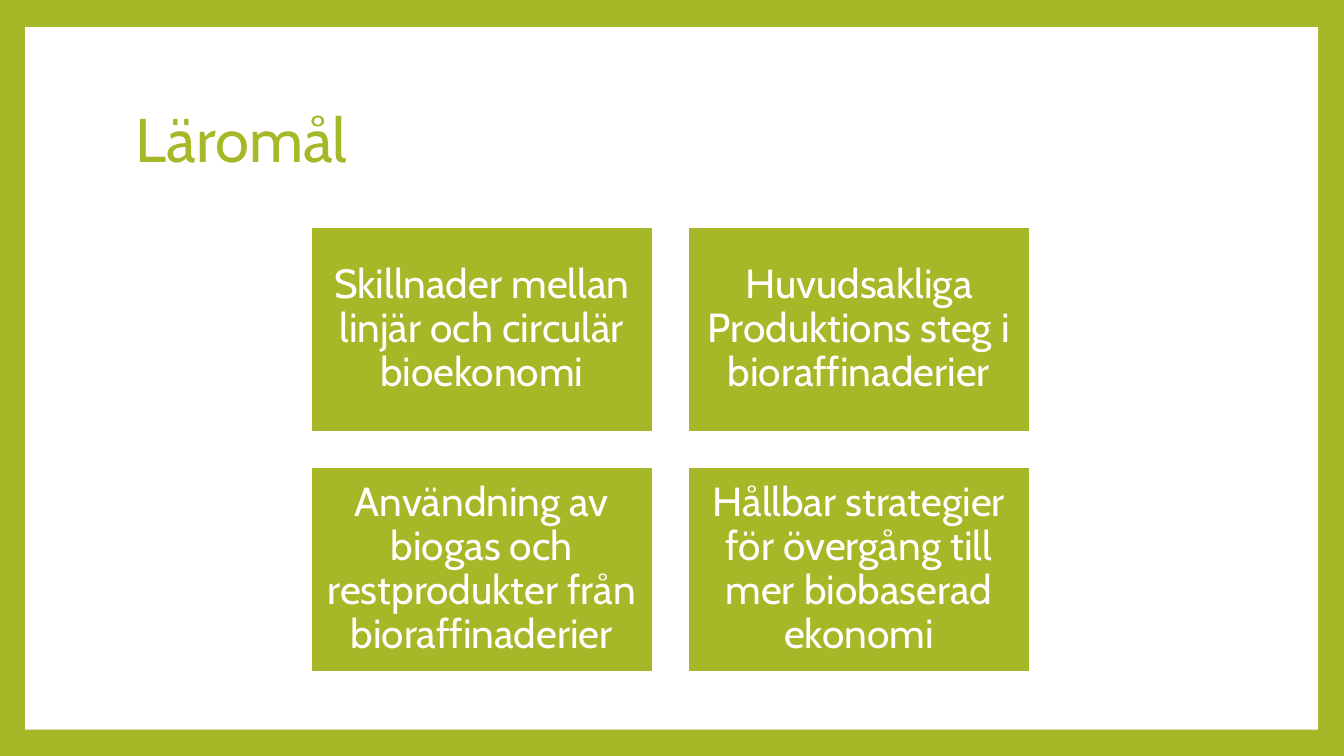
import pptx
import pptx.dml.color
import pptx.enum.shapes
import pptx.enum.text
import pptx.util

Inches = pptx.util.Inches
Pt = pptx.util.Pt
Align = pptx.enum.text.PP_ALIGN
GREEN = pptx.dml.color.RGBColor(0xA6, 0xB7, 0x27)
WHITE = pptx.dml.color.RGBColor(0xFF, 0xFF, 0xFF)


def put_text(shape, text, font="Cabin", size=29, color=WHITE,
             align=Align.CENTER, inset=(0.12, 0.12)):
    frame = shape.text_frame
    frame.word_wrap = True
    frame.vertical_anchor = pptx.enum.text.MSO_ANCHOR.MIDDLE
    frame.margin_left = frame.margin_right = Inches(inset[0])
    frame.margin_top = frame.margin_bottom = Inches(inset[1])
    para = frame.paragraphs[0]
    para.alignment = align
    para.line_spacing = 0.9
    run = para.add_run()
    run.text = text
    run.font.name = font
    run.font.size = Pt(size)
    run.font.color.rgb = color


class Deck:
    """Holds the style and the current slide."""

    def __init__(self, slide, main=GREEN, paper=WHITE):
        self.slide, self.main, self.paper = slide, main, paper
        fill = slide.background.fill
        fill.solid()
        fill.fore_color.rgb = main

    def rect(self, x, y, w, h, color, edge=None):
        box = self.slide.shapes.add_shape(
            pptx.enum.shapes.MSO_SHAPE.RECTANGLE,
            Inches(x), Inches(y), Inches(w), Inches(h))
        box.shadow.inherit = False
        box.fill.solid()
        box.fill.fore_color.rgb = color
        if edge is None:
            box.line.fill.background()
        else:
            box.line.color.rgb = edge
            box.line.width = Pt(1.5)
        return box

    def panel(self, x, y, w, h):
        self.rect(x, y, w, h, self.paper)

    def title(self, text, x, y, w, h):
        box = self.slide.shapes.add_textbox(
            Inches(x), Inches(y), Inches(w), Inches(h))
        put_text(box, text, size=44, color=self.main,
                 align=Align.LEFT, inset=(0.1, 0.05))

    def card(self, text, x, y, w, h):
        box = self.rect(x, y, w, h, self.main, edge=self.paper)
        put_text(box, text, color=self.paper)


def main():
    show = pptx.Presentation()
    show.slide_width = Inches(13.33)
    show.slide_height = Inches(7.5)
    deck = Deck(show.slides.add_slide(show.slide_layouts[6]))

    # White panel inside the green frame
    deck.panel(0.25, 0.27, 12.82, 6.97)
    deck.title("Läromål", 1.25, 0.67, 10.8, 1.48)

    # Goals in a grid of two columns
    goals = [
        "Skillnader mellan linjär och circulär bioekonomi",
        "Huvudsakliga Produktions steg i bioraffinaderier",
        "Användning av biogas och restprodukter från bioraffinaderier",
        "Hållbar strategier för övergång till mer biobaserad ekonomi",
    ]
    wide, high, gap = 3.4, 2.04, 0.34
    for i, goal in enumerate(goals):
        row, col = divmod(i, 2)
        deck.card(goal, 3.08 + col * (wide + gap),
                  2.25 + row * (high + gap), wide, high)

    show.save("out.pptx")


if __name__ == "__main__":
    main()
